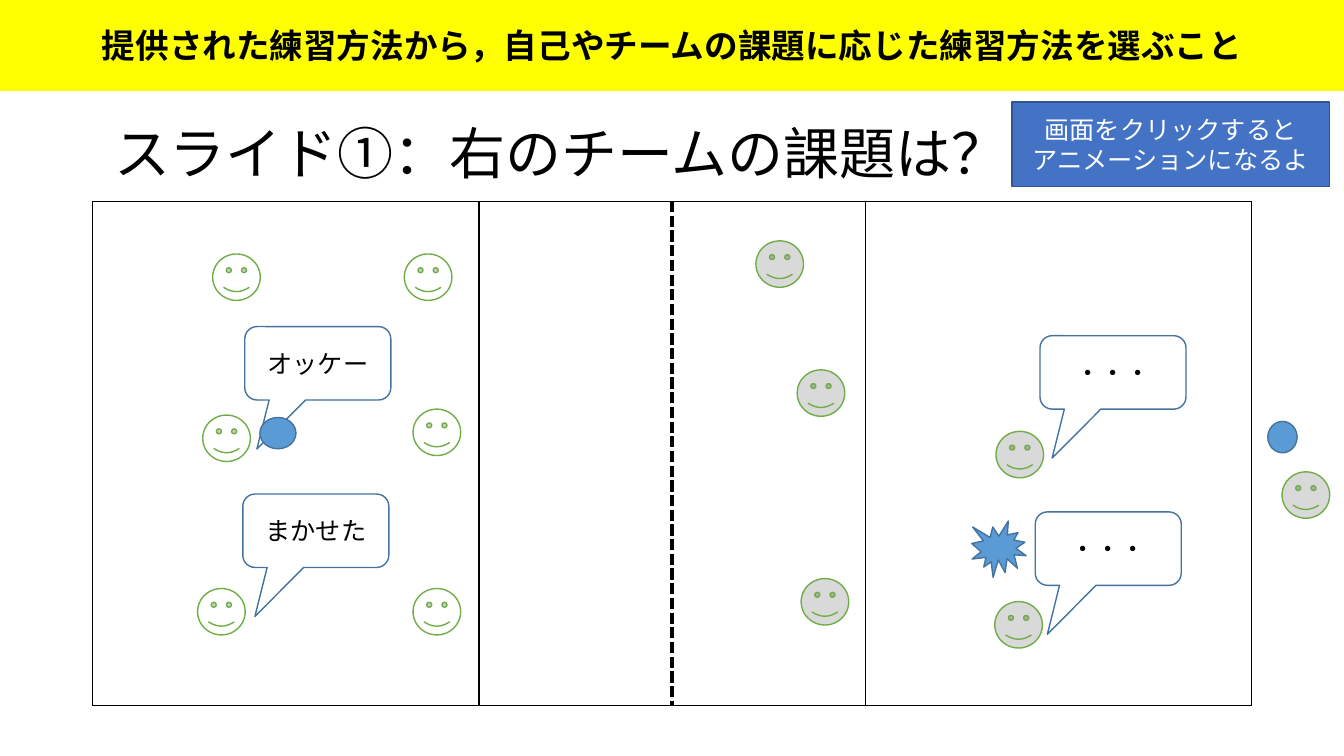
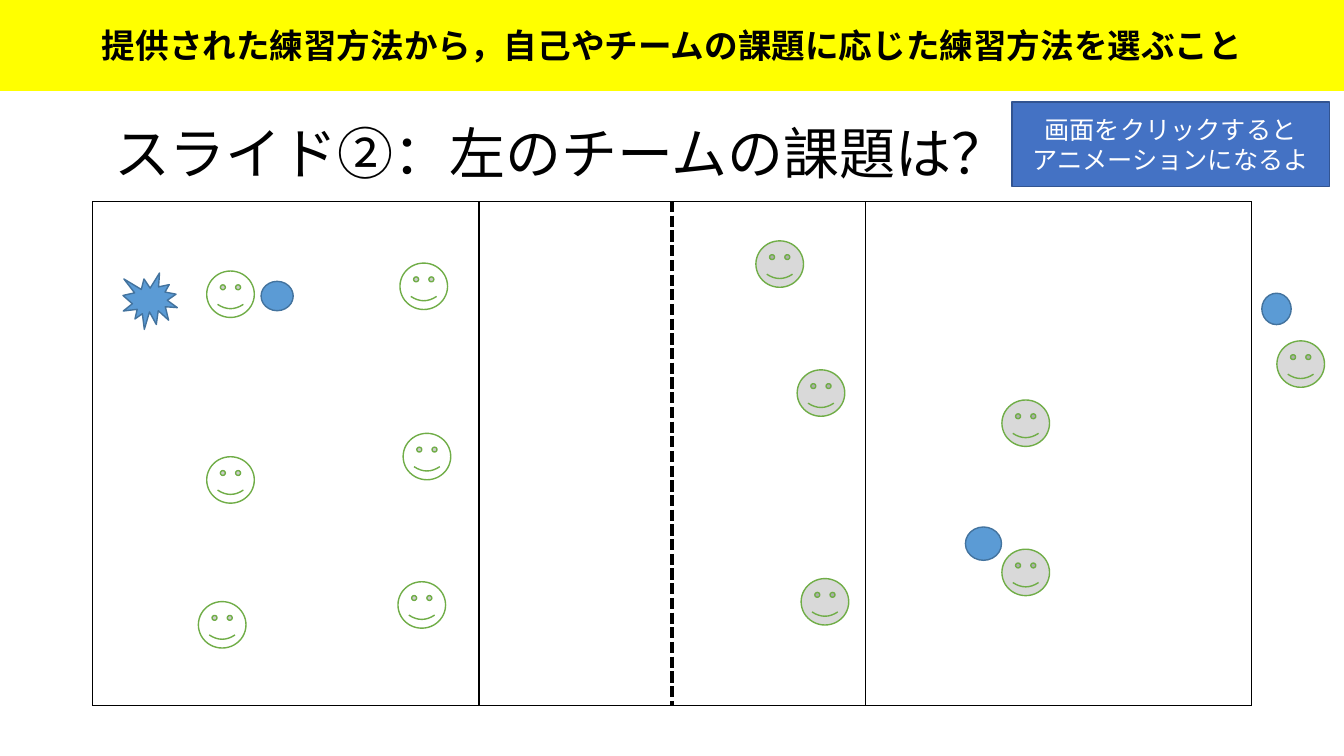
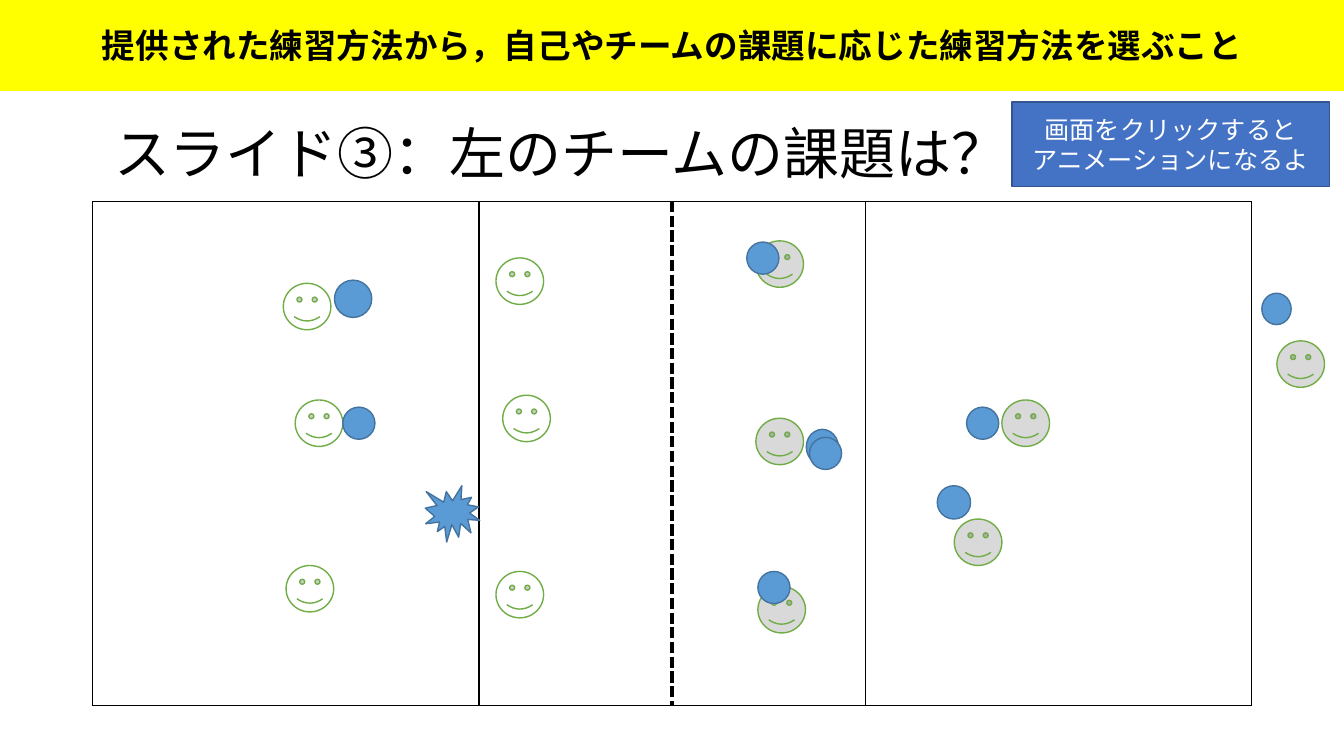
from dataclasses import dataclass

from lxml import etree
from pptx import Presentation
from pptx.dml.color import RGBColor
from pptx.enum import shapes, text
from pptx.oxml import ns
from pptx.util import Cm, Pt


@dataclass(frozen=True)
class Theme:
    font: str = "Noto Sans CJK JP"
    black: str = "000000"
    white: str = "FFFFFF"
    band: str = "FFFF00"
    badge: str = "4472C4"
    badge_line: str = "325491"
    ball: str = "5B9BD5"
    ball_line: str = "43739E"
    face_line: str = "70AD47"
    right_team: str = "D9D9D9"
    title_size: int = 40
    band_size: int = 24
    body_size: int = 18
    court_line: float = 1
    net_line: float = 3


THEME = Theme()
SHAPE = shapes.MSO_SHAPE
SLIDE_WIDTH, SLIDE_HEIGHT = 33.87, 19.05
FACE_SIZE = (1.2, 1.17)
BURST_SIZE = (1.37, 1.42)
CALLOUT_SIZE = (3.68, 1.85)
CALLOUT_TAIL = (-0.417, 1.168, 0.167)
COURT = (2.34, 5.08, 29.2, 12.7)
COURT_SHARES = (2, 1, 1, 2)

BAND_TEXT = "提供された練習方法から，自己やチームの課題に応じた練習方法を選ぶこと"
BADGE_LINES = ("画面をクリックすると", "アニメーションになるよ")


@dataclass(frozen=True)
class Scene:
    """Positions in cm; a ball is left, top, width, height."""
    title: str
    left_team: tuple
    right_team: tuple
    burst: tuple
    balls: tuple
    callouts: tuple = ()


SCENES = (
    Scene(
        title="スライド①：右のチームの課題は？",
        left_team=((10.19, 6.4), (5.36, 6.4), (10.41, 10.31),
                   (10.41, 14.83), (5.11, 10.46), (4.98, 14.83)),
        right_team=((32.31, 11.89), (25.07, 15.16), (25.1, 10.87),
                    (20.19, 14.58), (20.09, 9.32), (19.05, 6.07)),
        burst=(24.49, 13.13),
        balls=((31.95, 10.62, 0.74, 0.79), (6.55, 10.52, 0.91, 0.79)),
        callouts=(("オッケー", 6.17, 8.23), ("まかせた", 6.12, 12.45),
                  ("・・・", 26.21, 8.46), ("・・・", 26.09, 12.9)),
    ),
    Scene(
        title="スライド②：左のチームの課題は？",
        left_team=((10.08, 6.63), (5.21, 6.83), (10.16, 10.92),
                   (10.03, 14.66), (5.21, 11.51), (5, 15.16)),
        right_team=((32.18, 8.59), (25.25, 13.84), (25.25, 10.08),
                    (20.19, 14.58), (20.09, 9.32), (19.05, 6.07)),
        burst=(3.1, 6.88),
        balls=((31.8, 7.39, 0.74, 0.79), (6.58, 7.09, 0.81, 0.74),
               (24.33, 13.28, 0.91, 0.84)),
    ),
    Scene(
        title="スライド③：左のチームの課題は？",
        left_team=((12.5, 6.5), (7.14, 7.14), (12.67, 9.96),
                   (12.5, 14.4), (7.44, 10.08), (7.21, 14.25)),
        right_team=((32.18, 8.59), (24.05, 13.08), (25.25, 10.08),
                    (19.1, 14.78), (19.05, 10.54), (19.05, 6.07)),
        burst=(10.72, 12.24),
        balls=((31.8, 7.39, 0.74, 0.79), (8.43, 7.06, 0.94, 0.94),
               (23.62, 12.24, 0.84, 0.84), (20.32, 10.82, 0.81, 0.89),
               (8.64, 10.26, 0.81, 0.81), (18.82, 6.1, 0.81, 0.81),
               (24.36, 10.26, 0.81, 0.81), (20.4, 11.02, 0.81, 0.81),
               (19.1, 14.4, 0.81, 0.81)),
    ),
)


def rgb(color):
    return RGBColor.from_string(color)


def write(frame, lines, size, color, align=text.PP_ALIGN.CENTER, bold=False):
    for index, line in enumerate(lines):
        paragraph = frame.paragraphs[0] if index == 0 else frame.add_paragraph()
        paragraph.alignment = align
        run = paragraph.add_run()
        run.text = line
        run.font.size = Pt(size)
        run.font.bold = bold
        run.font.color.rgb = rgb(color)
        run.font.name = THEME.font
        east_asian = etree.SubElement(run.font._element, ns.qn("a:ea"))
        east_asian.set("typeface", THEME.font)


def add_preset(slide, preset, box, fill, line, line_width=1.0):
    shape = slide.shapes.add_shape(preset, *map(Cm, box))
    shape.shadow.inherit = False
    if fill:
        shape.fill.solid()
        shape.fill.fore_color.rgb = rgb(fill)
    else:
        shape.fill.background()
    shape.line.color.rgb = rgb(line)
    shape.line.width = Pt(line_width)
    shape.text_frame.vertical_anchor = text.MSO_ANCHOR.MIDDLE
    return shape


def set_title(slide, title_text):
    title = slide.shapes.title
    title.left, title.top, title.width, title.height = map(Cm, (2.62, 2.87, 24.6, 1.96))
    frame = title.text_frame
    frame.word_wrap = True
    frame.auto_size = text.MSO_AUTO_SIZE.NONE
    frame.vertical_anchor = text.MSO_ANCHOR.TOP
    write(frame, [title_text], THEME.title_size, THEME.black, text.PP_ALIGN.LEFT)


def set_borders(cell, net_side):
    """Draw thin borders, and a thick dashed one on the side of the net."""
    properties = cell._tc.get_or_add_tcPr()
    for index, side in enumerate(("lnL", "lnR", "lnT", "lnB")):
        is_net = side == net_side
        border = etree.Element(ns.qn(f"a:{side}"))
        border.set("w", str(Pt(THEME.net_line if is_net else THEME.court_line)))
        fill = etree.SubElement(border, ns.qn("a:solidFill"))
        etree.SubElement(fill, ns.qn("a:srgbClr")).set("val", THEME.black)
        dash = etree.SubElement(border, ns.qn("a:prstDash"))
        dash.set("val", "dash" if is_net else "solid")
        properties.insert(index, border)


def add_court(slide):
    table = slide.shapes.add_table(1, len(COURT_SHARES), *map(Cm, COURT)).table
    table.first_row = table.horz_banding = False
    net_sides = (None, "lnR", "lnL", None)
    for index, (share, net_side) in enumerate(zip(COURT_SHARES, net_sides)):
        table.columns[index].width = Cm(COURT[2] * share / sum(COURT_SHARES))
        cell = table.cell(0, index)
        cell.fill.background()
        set_borders(cell, net_side)


def add_team(slide, positions, fill):
    for position in positions:
        add_preset(slide, SHAPE.SMILEY_FACE, position + FACE_SIZE, fill, THEME.face_line)


def add_callout(slide, words, left, top):
    callout = add_preset(slide, SHAPE.ROUNDED_RECTANGULAR_CALLOUT,
                         (left, top) + CALLOUT_SIZE, None, THEME.ball_line)
    for index, value in enumerate(CALLOUT_TAIL):
        callout.adjustments[index] = value
    write(callout.text_frame, [words], THEME.body_size, THEME.black)


def add_band(slide):
    band = add_preset(slide, SHAPE.RECTANGLE, (0, 0, SLIDE_WIDTH, 2.29),
                      THEME.band, THEME.band, 0.75)
    frame = band.text_frame
    frame.word_wrap = False
    frame.margin_left = frame.margin_right = Cm(0.18)
    frame.margin_top = frame.margin_bottom = Cm(0.1)
    write(frame, [BAND_TEXT], THEME.band_size, THEME.black, bold=True)


def add_badge(slide):
    badge = add_preset(slide, SHAPE.RECTANGLE, (25.5, 2.57, 8, 2.13),
                       THEME.badge, THEME.badge_line)
    write(badge.text_frame, BADGE_LINES, THEME.body_size, THEME.white)


def add_scene(presentation, scene):
    title_only = presentation.slide_layouts.get_by_name("Title Only")
    slide = presentation.slides.add_slide(title_only)
    set_title(slide, scene.title)
    add_court(slide)
    add_team(slide, scene.left_team, THEME.white)
    add_team(slide, scene.right_team, THEME.right_team)
    for callout in scene.callouts:
        add_callout(slide, *callout)
    add_preset(slide, SHAPE.EXPLOSION1, scene.burst + BURST_SIZE,
               THEME.ball, THEME.ball_line)
    for ball in scene.balls:
        add_preset(slide, SHAPE.OVAL, ball, THEME.ball, THEME.ball_line)
    add_band(slide)
    add_badge(slide)


def main():
    presentation = Presentation()
    presentation.slide_width = Cm(SLIDE_WIDTH)
    presentation.slide_height = Cm(SLIDE_HEIGHT)
    for scene in SCENES:
        add_scene(presentation, scene)
    presentation.save("out.pptx")


if __name__ == "__main__":
    main()
